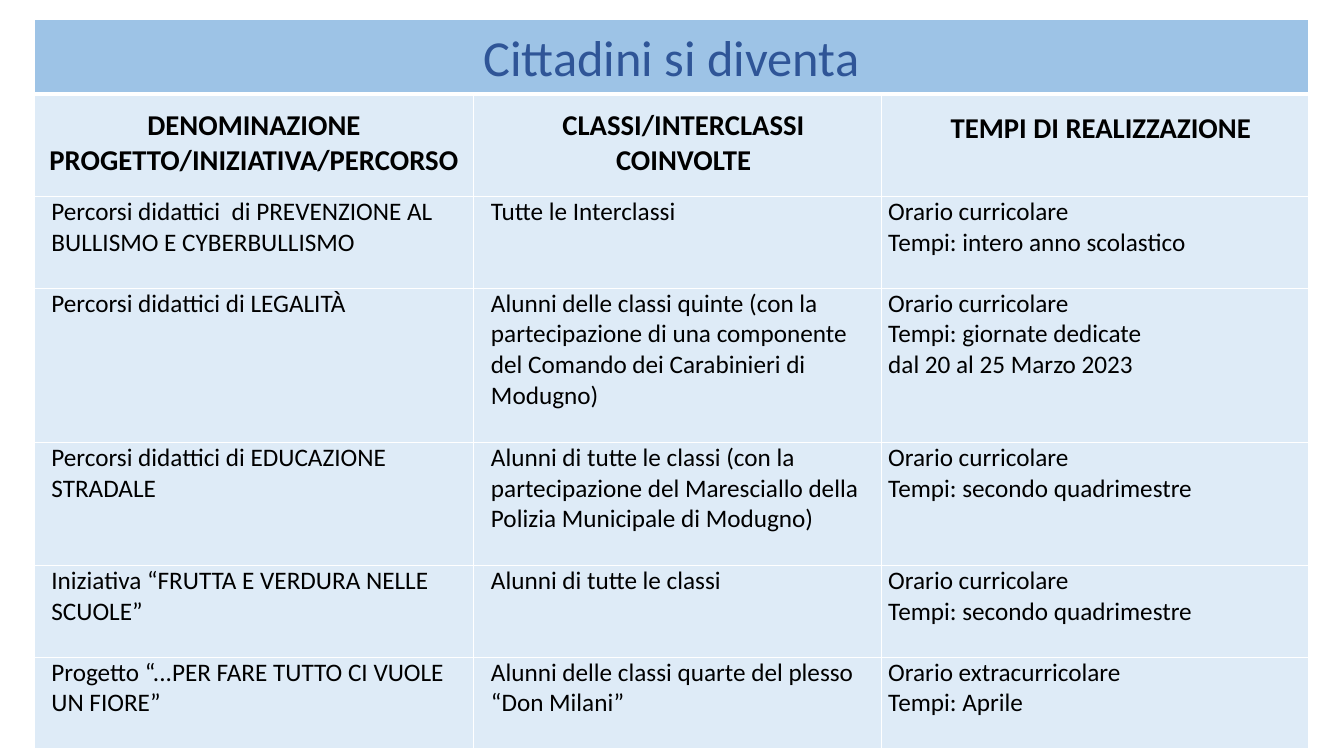
from lxml.etree import SubElement
from pptx import Presentation
from pptx.dml.color import RGBColor as RGB
from pptx.enum.text import MSO_ANCHOR as Anchor, PP_ALIGN as Align
from pptx.oxml.ns import qn
from pptx.util import Inches, Pt

THEME = {
    "font": "Calibri",
    "title": {"size": Pt(36), "bold": False, "color": RGB.from_string("2F5597")},
    "header": {"size": Pt(20.5), "bold": True, "color": RGB.from_string("000000")},
    "body": {"size": Pt(18), "bold": False, "color": RGB.from_string("000000")},
    "title_fill": RGB.from_string("9DC3E6"),
    "cell_fill": RGB.from_string("DEEBF7"),
    "border": "FFFFFF",
}

TITLE = "Cittadini si diventa"
HEADERS = [
    ["DENOMINAZIONE", "PROGETTO/INIZIATIVA/PERCORSO"],
    ["CLASSI/INTERCLASSI", "COINVOLTE"],
    ["TEMPI DI REALIZZAZIONE"],
]
PROJECTS = [
    [["Percorsi didattici  di PREVENZIONE AL BULLISMO E CYBERBULLISMO"],
     ["Tutte le Interclassi"],
     ["Orario curricolare", "Tempi: intero anno scolastico"]],
    [["Percorsi didattici di LEGALITÀ"],
     ["Alunni delle classi quinte (con la partecipazione di una componente "
      "del Comando dei Carabinieri di Modugno)"],
     ["Orario curricolare", "Tempi: giornate dedicate", "dal 20 al 25 Marzo 2023"]],
    [["Percorsi didattici di EDUCAZIONE STRADALE"],
     ["Alunni di tutte le classi (con la partecipazione del Maresciallo "
      "della Polizia Municipale di Modugno)"],
     ["Orario curricolare", "Tempi: secondo quadrimestre"]],
    [["Iniziativa “FRUTTA E VERDURA NELLE SCUOLE”"],
     ["Alunni di tutte le classi"],
     ["Orario curricolare", "Tempi: secondo quadrimestre"]],
    [["Progetto “...PER FARE TUTTO CI VUOLE UN FIORE”"],
     ["Alunni delle classi quarte del plesso “Don Milani”"],
     ["Orario extracurricolare", "Tempi: Aprile"]],
]
COLUMN_WIDTHS = [4.36, 4.04, 4.24]
ROW_HEIGHTS = [0.74, 1.02, 0.91, 1.53, 1.22, 0.91, 0.91]
HEADER_MARGINS = [(0.07, 0.14), (0.19, 0.14), (0.19, 0.17)]  # left, top
BODY_LEFT_MARGINS = [0.17, 0.17, 0.07]


def style_cell(cell, fill, bottom_width=1):
    """Draw the white borders, then the fill."""
    properties = cell._tc.get_or_add_tcPr()
    for side, width in (("L", 1), ("R", 1), ("T", 1), ("B", bottom_width)):
        line = SubElement(properties, qn(f"a:ln{side}"), w=str(Pt(width)))
        SubElement(SubElement(line, qn("a:solidFill")), qn("a:srgbClr"), val=THEME["border"])
    cell.fill.solid()
    cell.fill.fore_color.rgb = fill


def write_cell(cell, lines, style, align, left=0.07, top=0.0):
    """Write one paragraph per line in a theme text style."""
    margins = {"margin_left": left, "margin_right": 0.07,
               "margin_top": top, "margin_bottom": 0}
    for name, value in margins.items():
        setattr(cell, name, Inches(value))
    cell.vertical_anchor = Anchor.TOP
    cell.text = "\n".join(lines)
    for paragraph in cell.text_frame.paragraphs:
        paragraph.alignment = align
        font = paragraph.runs[0].font
        font.name = THEME["font"]
        font.size, font.bold = THEME[style]["size"], THEME[style]["bold"]
        font.color.rgb = THEME[style]["color"]


prs = Presentation()
prs.slide_width, prs.slide_height = Inches(13.33), Inches(7.5)
slide = prs.slides.add_slide(prs.slide_layouts[6])

# Table grid
projects_table = slide.shapes.add_table(
    len(ROW_HEIGHTS), len(COLUMN_WIDTHS), Inches(0.34), Inches(0.19),
    Inches(sum(COLUMN_WIDTHS)), Inches(sum(ROW_HEIGHTS))).table
projects_table.first_row = projects_table.horz_banding = False
for column, width in zip(projects_table.columns, COLUMN_WIDTHS):
    column.width = Inches(width)
for row, height in zip(projects_table.rows, ROW_HEIGHTS):
    row.height = Inches(height)

# Title row across all columns
title_cell = projects_table.cell(0, 0)
title_cell.merge(projects_table.cell(0, len(COLUMN_WIDTHS) - 1))
for cell in projects_table.rows[0].cells:
    style_cell(cell, THEME["title_fill"], bottom_width=3)
write_cell(title_cell, [TITLE], "title", Align.CENTER, top=0.05)
title_cell.text_frame.paragraphs[0].line_spacing = 1.07

# Column headings
for col, (lines, (left, top)) in enumerate(zip(HEADERS, HEADER_MARGINS)):
    cell = projects_table.cell(1, col)
    style_cell(cell, THEME["cell_fill"])
    write_cell(cell, lines, "header", Align.CENTER, left, top)

# Projects, classes and times
for row, project in enumerate(PROJECTS, start=2):
    for col, (lines, left) in enumerate(zip(project, BODY_LEFT_MARGINS)):
        cell = projects_table.cell(row, col)
        style_cell(cell, THEME["cell_fill"])
        write_cell(cell, lines, "body", Align.LEFT, left)

prs.save("out.pptx")
